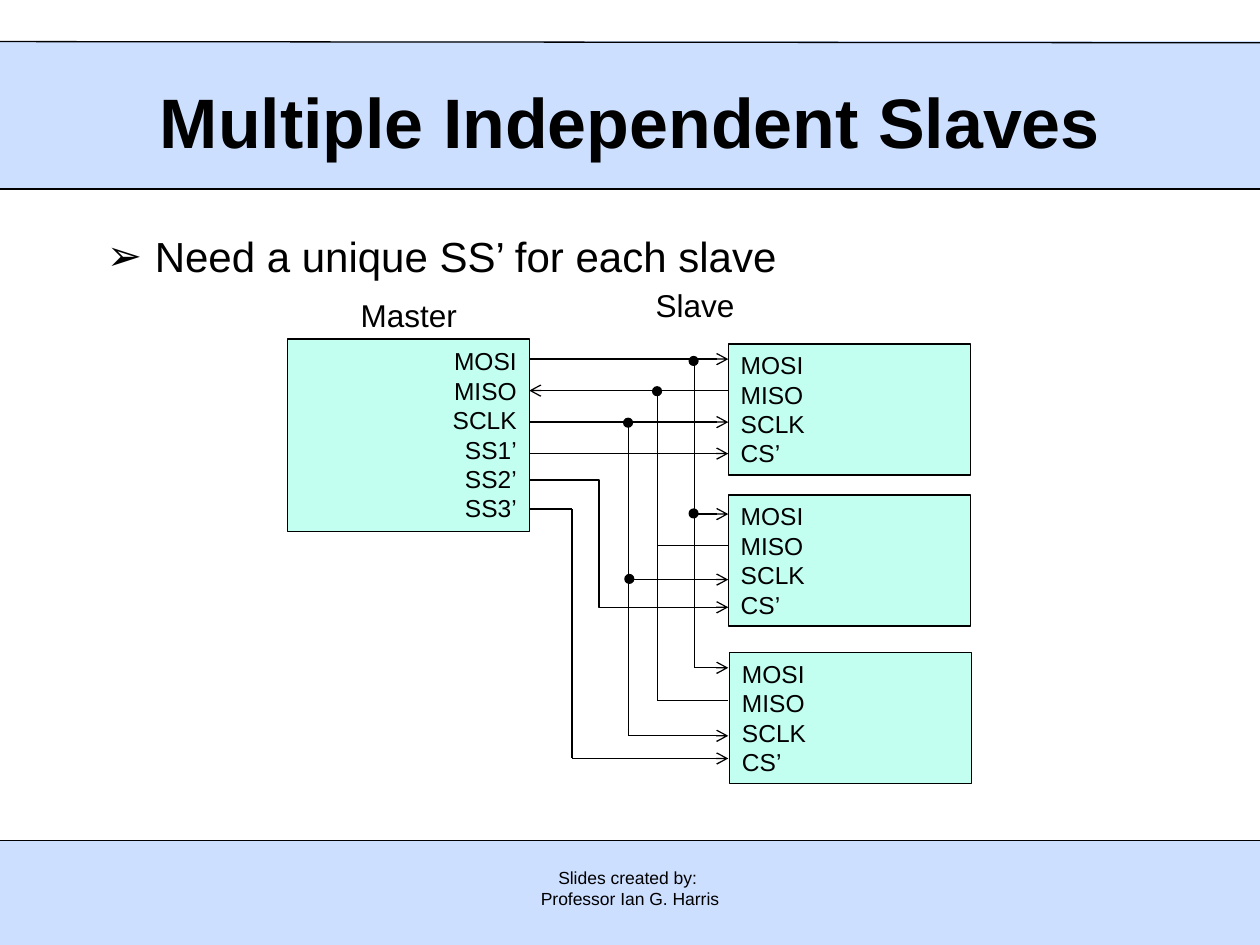
from lxml import etree
from pptx import Presentation
from pptx import util as u
from pptx.dml.color import RGBColor
from pptx.enum import shapes, text
from pptx.oxml.ns import qn

BLACK = RGBColor(0x00, 0x00, 0x00)
BAND_BLUE = RGBColor(0xCD, 0xDF, 0xFF)
CHIP_MINT = RGBColor(0xC2, 0xFF, 0xF0)
LEFT, CENTER, RIGHT = text.PP_ALIGN.LEFT, text.PP_ALIGN.CENTER, text.PP_ALIGN.RIGHT
RECT, OVAL = shapes.MSO_SHAPE.RECTANGLE, shapes.MSO_SHAPE.OVAL

deck = Presentation()
deck.slide_width, deck.slide_height = u.Inches(10), u.Inches(7.5)
page = deck.slides.add_slide(deck.slide_layouts[6])


def add_words(place, lines, size, align=LEFT, bold=False):
    box = page.shapes.add_textbox(*map(u.Inches, place))
    box.text_frame.word_wrap = True
    for index, line in enumerate(lines):
        para = box.text_frame.paragraphs[0] if index == 0 else box.text_frame.add_paragraph()
        para.alignment = align
        span = para.add_run()
        span.text = line
        span.font.name = "Arial"
        span.font.size = u.Pt(size)
        span.font.bold = bold
        span.font.color.rgb = BLACK
    return box


def add_wire(start, end, arrow=False, kind=shapes.MSO_CONNECTOR.STRAIGHT):
    wire = page.shapes.add_connector(kind, *map(u.Inches, (*start, *end)))
    wire.line.color.rgb = BLACK
    wire.line.width = u.Pt(0.75)
    if arrow:
        etree.SubElement(wire.line._get_or_add_ln(), qn("a:tailEnd"), type="arrow")
    etree.SubElement(wire._element.spPr, qn("a:effectLst"))
    return wire


# Bands, chip bodies and junction dots: shape, place, fill, outline
chip_places = [(5.78, 2.73), (5.78, 3.93), (5.79, 5.18)]
dot_places = [(5.47, 2.83), (5.47, 4.04), (5.18, 3.07), (4.95, 3.32), (4.96, 4.56)]
solids = [
    (RECT, (0, 6.67, 10, 0.83), BAND_BLUE, BAND_BLUE),
    (RECT, (0, 0.33, 10, 1.17), BAND_BLUE, BAND_BLUE),
    (RECT, (2.28, 2.69, 1.92, 1.53), CHIP_MINT, BLACK),
]
solids += [(RECT, (*corner, 1.92, 1.04), CHIP_MINT, BLACK) for corner in chip_places]
solids += [(OVAL, (*corner, 0.07, 0.07), BLACK, BLACK) for corner in dot_places]
for preset, place, fill, outline in solids:
    solid = page.shapes.add_shape(preset, *map(u.Inches, place))
    solid.shadow.inherit = False
    solid.fill.solid()
    solid.fill.fore_color.rgb = fill
    solid.line.color.rgb = outline
    solid.line.width = u.Pt(0.75)

# Band edges
for left_y, right_y in [(0.33, 0.34), (1.5, 1.5), (6.67, 6.67)]:
    add_wire((0, left_y), (10, right_y))

# Title and footer
title = add_words((0.75, 0.33, 8.5, 1.25), ["Multiple Independent Slaves"], 40, CENTER, True)
title.text_frame.vertical_anchor = text.MSO_ANCHOR.MIDDLE
add_words((3.42, 6.83, 3.16, 0.49), ["Slides created by: ", "Professor Ian G. Harris"], 10, CENTER)

# Bullet line
bullet = add_words((0.75, 1.58, 8.92, 0.63), ["Need a unique SS’ for each slave"], 24)
para = bullet.text_frame.paragraphs[0]
para.line_spacing = 1.5
props = para._p.get_or_add_pPr()
props.set("marL", str(u.Inches(0.38)))
props.set("indent", str(u.Inches(-0.38)))
etree.SubElement(props, qn("a:buFont"), typeface="Arial")
etree.SubElement(props, qn("a:buChar"), char="➢")

# Chip captions and pin names
add_words((2.45, 2.3, 1.59, 0.4), ["Master"], 18, CENTER)
add_words((4.72, 2.22, 1.59, 0.4), ["Slave"], 18, CENTER)
bus_pins = ["MOSI", "MISO", "SCLK"]
add_words((3.45, 2.7, 0.75, 1.51), bus_pins + ["SS1’", "SS2’", "SS3’"], 14, RIGHT)
for corner in chip_places:
    add_words((*corner, 0.75, 1.04), bus_pins + ["CS’"], 14)

# Master to first slave; MISO runs back to the master
MASTER_X, SLAVE_X = 4.2, 5.78
for y in (2.85, 3.35, 3.6):
    add_wire((MASTER_X, y), (SLAVE_X, y), arrow=True)
add_wire((SLAVE_X, 3.1), (MASTER_X, 3.1), arrow=True)

# Shared buses: trunk x, first y, branch heights, arrow at the slave
for x, top, branches, arrow in [
    (5.51, 2.85, (4.08, 5.3), True),
    (5.22, 3.1, (4.33, 5.56), False),
    (4.99, 3.35, (4.6, 5.84), True),
]:
    add_wire((x, top), (x, branches[-1]))
    for y in branches:
        add_wire((x, y), (SLAVE_X, y), arrow)

# SS2 to the second slave
select = add_wire((MASTER_X, 3.81), (SLAVE_X, 4.82), True, shapes.MSO_CONNECTOR.ELBOW)
guides = select._element.spPr.find(qn("a:prstGeom")).get_or_add_avLst()
etree.SubElement(guides, qn("a:gd"), name="adj1", fmla="val 35100")

# SS3 to the third slave
add_wire((MASTER_X, 4.04), (4.54, 4.04))
add_wire((4.54, 4.04), (4.54, 6.02))
add_wire((4.54, 6.02), (SLAVE_X, 6.02), arrow=True)

deck.save("out.pptx")
